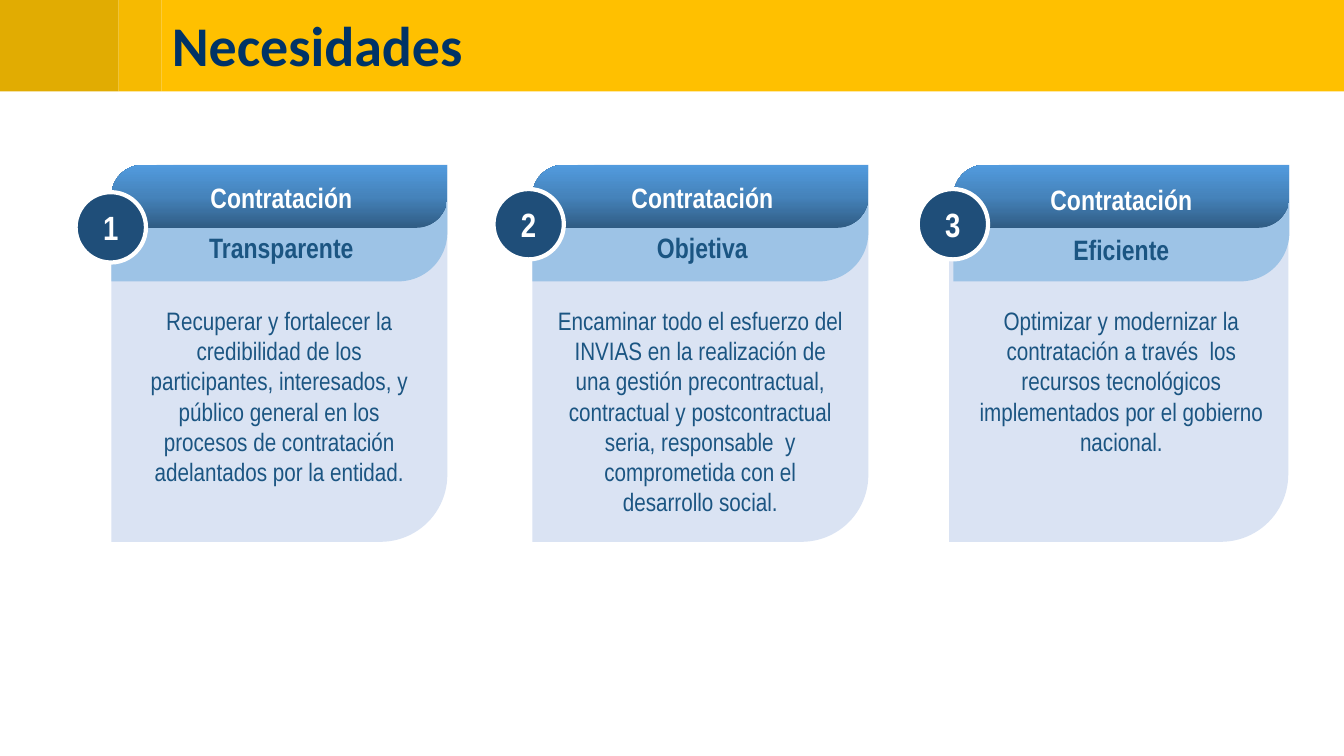
from copy import deepcopy

from pptx import Presentation
from pptx.dml.color import RGBColor
from pptx.enum.shapes import MSO_SHAPE
from pptx.enum.text import MSO_ANCHOR, MSO_AUTO_SIZE, PP_ALIGN
from pptx.util import Pt

PX = 9525
CARD_TOP, CARD_WIDTH = 157, 320
BODY_INSET, BODY_TOP, BODY_WIDTH = 14, 286, 292
HEADING_WIDTH, HEADING_HEIGHT = 158, 90
BADGE_SIZE = 67
NARROW = "Arial Narrow"
BLUE_TEXT = "1B5582"
HEADER_BLOCKS = [(0, 113, "E1AC02"), (113, 41, "F6BA01"), (154, 1126, "FFC000")]
GRADIENT = [(0, "305C84"), (0.5, "4583BB"), (1, "529BDE")]

CARDS = [
    {"left": 106, "panel": (106, 320), "badge": (72, 183), "heading": (189, 167),
     "topic": "Transparente", "body_height": 184,
     "body": "Recuperar y fortalecer la credibilidad de los participantes, interesados, "
             "y público general en los procesos de contratación adelantados por la entidad."},
    {"left": 507, "panel": (507, 320), "badge": (470, 180), "heading": (590, 167),
     "topic": "Objetiva", "body_height": 213,
     "body": "Encaminar todo el esfuerzo del INVIAS en la realización de una gestión "
             "precontractual, contractual y postcontractual seria, responsable  y "
             "comprometida con el desarrollo social."},
    {"left": 908, "panel": (904, 323), "badge": (874, 180), "heading": (989, 169),
     "topic": "Eficiente", "body_height": 155,
     "body": "Optimizar y modernizar la contratación a través  los recursos tecnológicos "
             "implementados por el gobierno nacional."},
]


def color(value):
    """Turn a hex string into a colour."""
    return RGBColor.from_string(value)


def box(*lengths):
    """Turn px lengths into EMU."""
    return [length * PX for length in lengths]


def add_block(slide, kind, area, fill=None):
    """Add a preset shape without outline or shadow."""
    shape = slide.shapes.add_shape(kind, *box(*area))
    shape.shadow.inherit = False
    shape.line.fill.background()
    if fill:
        shape.fill.solid()
        shape.fill.fore_color.rgb = color(fill)
    return shape


def add_leaf(slide, area, rounding, fill=None):
    """Add a rectangle with two opposite corners rounded."""
    shape = add_block(slide, MSO_SHAPE.ROUND_2_DIAG_RECTANGLE, area, fill)
    shape.adjustments[0] = rounding
    shape.adjustments[1] = 0
    return shape


def fill_gradient(shape):
    """Fill a shape with the dark-to-light upward gradient."""
    shape.fill.gradient()
    shape.fill.gradient_angle = 90
    first = shape.fill.gradient_stops[0]._gs
    first.addnext(deepcopy(first))
    for stop, (position, value) in zip(shape.fill.gradient_stops, GRADIENT):
        stop.color.rgb = color(value)
        stop.position = position


def write(paragraph, text, size, value, bold=False, font=NARROW, align=PP_ALIGN.CENTER):
    """Write and format one paragraph."""
    paragraph.text = text
    paragraph.alignment = align
    paragraph.font.name = font
    paragraph.font.size = Pt(size)
    paragraph.font.bold = bold
    paragraph.font.color.rgb = color(value)


def add_text_frame(slide, area, wrap):
    """Add a text box that grows with its text and return its frame."""
    frame = slide.shapes.add_textbox(*box(*area)).text_frame
    frame.word_wrap = wrap
    frame.auto_size = MSO_AUTO_SIZE.SHAPE_TO_FIT_TEXT
    return frame


def add_badge(slide, left, top, number):
    """Add a numbered circle with a white rim."""
    badge = add_block(slide, MSO_SHAPE.OVAL, (left, top, BADGE_SIZE, BADGE_SIZE), "1F4E79")
    badge.line.color.rgb = color("FFFFFF")
    badge.line.width = Pt(3)
    badge.text_frame.vertical_anchor = MSO_ANCHOR.MIDDLE
    write(badge.text_frame.paragraphs[0], str(number), 24, "FFFFFF", bold=True)


def add_card(slide, number, card):
    """Add one card with its layers, badge, heading and body."""
    panel_left, panel_width = card["panel"]
    add_leaf(slide, (panel_left, CARD_TOP, panel_width, 359), 0.199, "DAE3F3")
    add_leaf(slide, (card["left"], CARD_TOP, CARD_WIDTH, 111), 0.421, "9DC3E6")
    fill_gradient(add_leaf(slide, (card["left"], CARD_TOP, CARD_WIDTH, 60), 0.5))
    add_badge(slide, *card["badge"], number)

    body_area = (card["left"] + BODY_INSET, BODY_TOP, BODY_WIDTH, card["body_height"])
    body = add_text_frame(slide, body_area, True)
    write(body.paragraphs[0], card["body"], 18, BLUE_TEXT)

    heading = add_text_frame(slide, (*card["heading"], HEADING_WIDTH, HEADING_HEIGHT), False)
    write(heading.paragraphs[0], "Contratación", 20, "FFFFFF", bold=True)
    topic = heading.add_paragraph()
    write(topic, card["topic"], 20, BLUE_TEXT, bold=True)
    topic.space_before = Pt(12)


def add_header(slide):
    """Add the yellow header and place the title on it."""
    for left, width, fill in HEADER_BLOCKS:
        add_block(slide, MSO_SHAPE.RECTANGLE, (left, 0, width, 87), fill)
    title = slide.shapes.title
    title.left, title.top, title.width, title.height = box(154, 3, 1065, 87)
    title.text_frame.vertical_anchor = MSO_ANCHOR.MIDDLE
    paragraph = title.text_frame.paragraphs[0]
    write(paragraph, "Necesidades", 40, "003366", True, "Calibri", PP_ALIGN.LEFT)
    paragraph.line_spacing = 0.9
    slide.shapes._spTree.append(title._element)


def main():
    """Build and save the presentation."""
    presentation = Presentation()
    presentation.slide_width, presentation.slide_height = box(1280, 720)
    slide = presentation.slides.add_slide(presentation.slide_layouts[5])
    add_header(slide)
    for number, card in enumerate(CARDS, start=1):
        add_card(slide, number, card)
    presentation.save("out.pptx")


if __name__ == "__main__":
    main()
